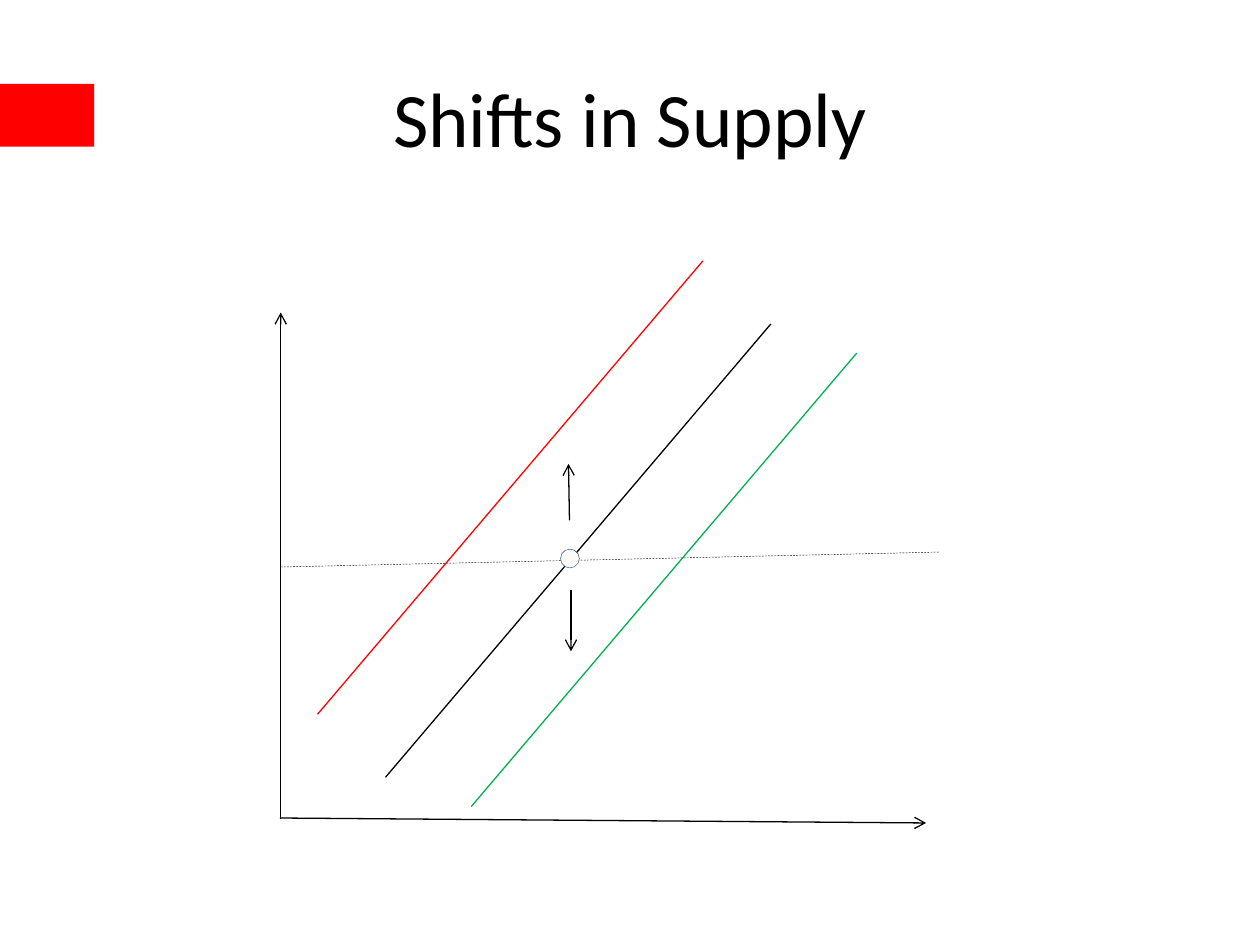
from lxml.etree import SubElement
from pptx import Presentation
from pptx.dml.color import RGBColor
from pptx.enum.dml import MSO_LINE as Dash
from pptx.enum.shapes import MSO_CONNECTOR as Link, MSO_SHAPE as Shape
from pptx.enum.text import MSO_ANCHOR as Anchor, PP_ALIGN as Align
from pptx.oxml.ns import qn
from pptx.util import Cm, Pt

BLACK, RED, GREEN = "000000", "FF0000", "00B050"


def color(code):
    return RGBColor.from_string(code)


def assign(item, values):
    for name, value in values.items():
        setattr(item, name, value)


def add_mark(parent, kind, box, fill, edge=None):
    mark = parent.shapes.add_shape(kind, *map(Cm, box))
    mark.shadow.inherit = False
    mark.fill.solid()
    mark.fill.fore_color.rgb = color(fill)
    if edge:
        mark.line.color.rgb = color(edge)
        mark.line.width = Pt(0.25)
    else:
        mark.line.fill.background()


def add_line(parent, start, end, code=BLACK, arrow=False, **style):
    link = parent.shapes.add_connector(Link.STRAIGHT, *map(Cm, start + end))
    link.line.color.rgb = color(code)
    assign(link.line, {"width": Pt(0.75), **style})
    if arrow:
        SubElement(link.line._ln, qn("a:tailEnd"), type="arrow")
    SubElement(link._element.spPr, qn("a:effectLst"))


def set_title(slide, box, text):
    title = slide.shapes.title
    assign(title, dict(zip(("left", "top", "width", "height"), map(Cm, box))))
    title.text_frame.vertical_anchor = Anchor.MIDDLE
    para = title.text_frame.paragraphs[0]
    para.text = text
    para.alignment = Align.CENTER
    assign(para.font, {"name": "Calibri", "size": Pt(44)})
    para.font.color.rgb = color(BLACK)


def draw_graph(slide, left, top):
    """Supply curves with axes, price line and shift arrows."""
    group = slide.shapes.add_group_shape()
    run, rise = 7.77, 9.14

    def line(x1, y1, x2, y2, *args, **style):
        add_line(group, (left + x1, top + y1), (left + x2, top + y2),
                 *args, **style)

    def supply(x, y, code):
        line(x, y, x + run, y - rise, code)

    arrows = [
        (0, 11.23, 13.03, 11.33),    # quantity axis
        (0.02, 11.25, 0.02, 1.04),   # price axis
        (5.84, 5.23, 5.82, 4.09),    # shift up
        (5.87, 6.63, 5.87, 7.87),    # shift down
    ]
    for ends in arrows:
        line(*ends, arrow=True)
    supply(2.13, 10.41, BLACK)
    line(0.02, 6.17, 13.28, 5.87, width=Pt(0.25), dash_style=Dash.DASH)
    add_mark(group, Shape.OVAL, (left + 5.66, top + 5.81, 0.38, 0.38),
             "FCFBF9", "1F497D")
    supply(0.76, 9.14, RED)
    supply(3.86, 11, GREEN)


def main():
    deck = Presentation()
    deck.slide_width, deck.slide_height = Cm(25.4), Cm(19.05)
    slide = deck.slides.add_slide(deck.slide_layouts[5])
    add_mark(slide, Shape.RECTANGLE, (0, 1.69, 1.9, 1.27), RED)
    set_title(slide, (1.27, 0.76, 22.86, 3.18), "Shifts in Supply")
    draw_graph(slide, 5.64, 5.26)
    deck.save("out.pptx")


if __name__ == "__main__":
    main()
